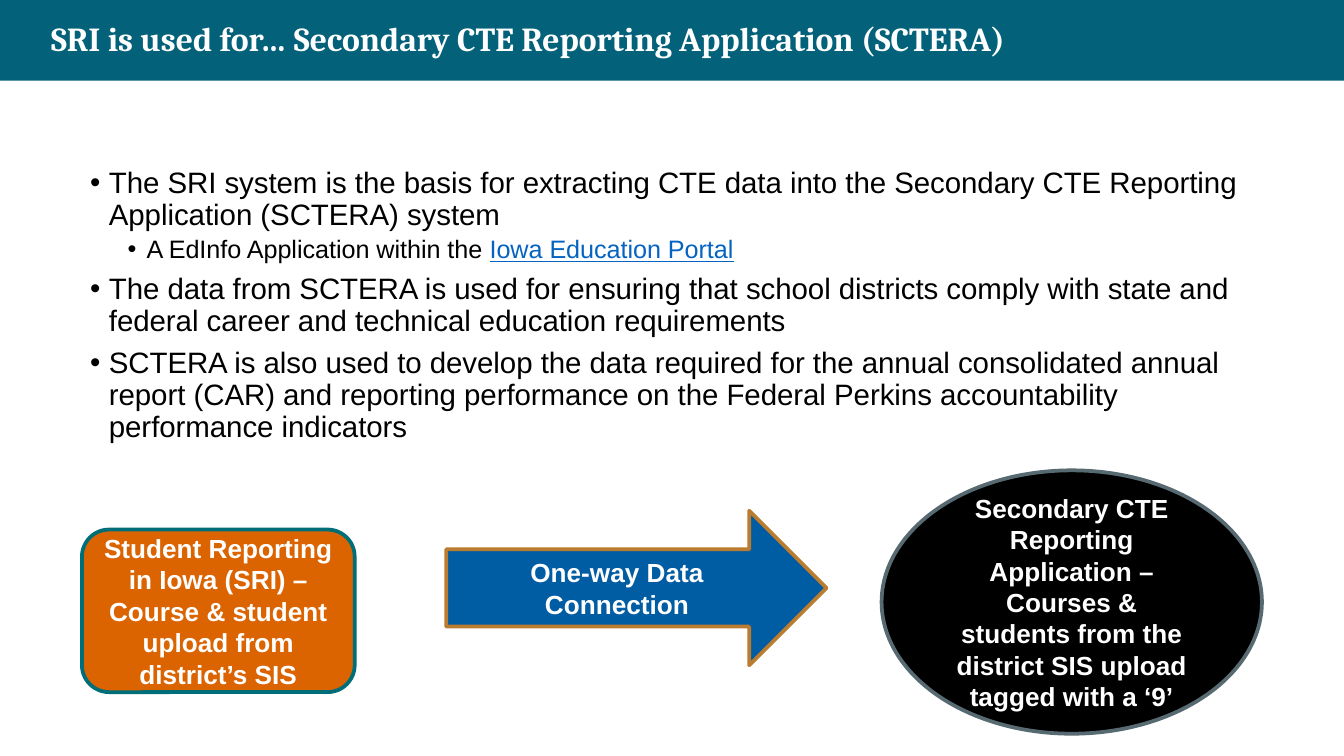
from lxml.etree import SubElement
from pptx import Presentation
from pptx.dml.color import RGBColor
from pptx.enum.shapes import MSO_SHAPE as Preset
from pptx.enum.text import MSO_ANCHOR as Anchor, MSO_AUTO_SIZE as AutoSize, PP_ALIGN as Align
from pptx.oxml.ns import qn
from pptx.util import Inches, Pt

WIDTH = 10
HEIGHT = WIDTH * 9 / 16
BAND_HEIGHT = 0.6
WHITE, BLACK, LINK_BLUE = "FFFFFF", "000000", "0563C1"

# Each bullet: level, then its runs as (text, is a link)
BULLETS = [
    (0, [("The SRI system is the basis for extracting CTE data into the "
          "Secondary CTE Reporting Application (SCTERA) system", False)]),
    (1, [("A EdInfo Application within the ", False), ("Iowa Education Portal", True)]),
    (0, [("The data from SCTERA is used for ensuring that school districts comply "
          "with state and federal career and technical education requirements", False)]),
    (0, [("SCTERA is also used to develop the data required for the annual "
          "consolidated annual report (CAR) and reporting performance on the "
          "Federal Perkins accountability performance indicators", False)]),
]
# Per level: text size, space before, left indent in inches
LEVELS = [(15.75, 5.6, 0.14), (13.5, 2.8, 0.42)]
HANGING = 0.14

# Data flow: preset, box, fill, line, paragraphs
FLOW = [
    (Preset.RIGHT_ARROW, (3.32, 3.8, 2.83, 1.15), "005CA3", "BA7C2E",
     ["One-way Data Connection"]),
    (Preset.ROUNDED_RECTANGLE, (0.61, 3.94, 2.03, 1.21), "DC6400", "006E79",
     ["Student Reporting in Iowa (SRI) – Course & student upload from district’s SIS"]),
    (Preset.OVAL, (6.56, 3.5, 2.83, 1.96), BLACK, "576971",
     ["Secondary CTE Reporting Application –",
      "Courses & students from the district SIS upload tagged with a ‘9’"]),
]


def rgb(value):
    return RGBColor.from_string(value)


def place(shape, left, top, width, height):
    shape.left, shape.top = Inches(left), Inches(top)
    shape.width, shape.height = Inches(width), Inches(height)


def style_run(run, size, color, font="Arial", bold=False):
    run.font.name, run.font.size, run.font.bold = font, Pt(size), bold
    run.font.color.rgb = rgb(color)


def add_filled(slide, preset, box, fill, line=None):
    shape = slide.shapes.add_shape(preset, *map(Inches, box))
    shape.shadow.inherit = False
    shape.fill.solid()
    shape.fill.fore_color.rgb = rgb(fill)
    if line:
        shape.line.color.rgb = rgb(line)
        shape.line.width = Pt(2)
    else:
        shape.line.fill.background()
    return shape


def add_header(slide):
    title = slide.shapes.title
    band = add_filled(slide, Preset.RECTANGLE, (0, 0, WIDTH, BAND_HEIGHT), "03617A")
    title._element.addprevious(band._element)  # band goes behind the title
    place(title, 0.28, 0, 9.24, BAND_HEIGHT)
    frame = title.text_frame
    frame.text = "SRI is used for… Secondary CTE Reporting Application (SCTERA)"
    frame.auto_size = AutoSize.NONE
    frame.vertical_anchor = Anchor.MIDDLE
    heading = frame.paragraphs[0]
    heading.alignment = Align.LEFT
    heading.line_spacing = 0.9
    style_run(heading.runs[0], 18, WHITE, "Cambria", True)


def set_bullet(paragraph, indent):
    props = paragraph._p.get_or_add_pPr()
    props.set("marL", str(Inches(indent)))
    props.set("indent", str(-Inches(HANGING)))
    SubElement(props, qn("a:buFont")).set("typeface", "Arial")
    SubElement(props, qn("a:buChar")).set("char", "•")


def add_bullets(slide):
    body = slide.placeholders[1]
    place(body, 0.57, 1.2, 8.87, 3.57)
    frame = body.text_frame
    frame.auto_size = AutoSize.NONE
    for index, (level, parts) in enumerate(BULLETS):
        paragraph = frame.add_paragraph() if index else frame.paragraphs[0]
        size, space, indent = LEVELS[level]
        paragraph.level = level
        paragraph.line_spacing = 0.9
        paragraph.space_before = Pt(space)
        set_bullet(paragraph, indent)
        for text, is_link in parts:
            run = paragraph.add_run()
            run.text = text
            style_run(run, size, LINK_BLUE if is_link else BLACK)
            run.font.underline = is_link


def add_flow_step(slide, preset, box, fill, line, paragraphs):
    frame = add_filled(slide, preset, box, fill, line).text_frame
    frame.word_wrap = True
    frame.vertical_anchor = Anchor.MIDDLE
    frame.text = "\n".join(paragraphs)
    for paragraph in frame.paragraphs:
        paragraph.alignment = Align.CENTER
        style_run(paragraph.runs[0], 14, WHITE, bold=True)


def main():
    deck = Presentation()
    deck.slide_width, deck.slide_height = Inches(WIDTH), Inches(HEIGHT)
    slide = deck.slides.add_slide(deck.slide_layouts[1])
    add_header(slide)
    add_bullets(slide)
    for step in FLOW:
        add_flow_step(slide, *step)
    deck.save("out.pptx")


if __name__ == "__main__":
    main()
